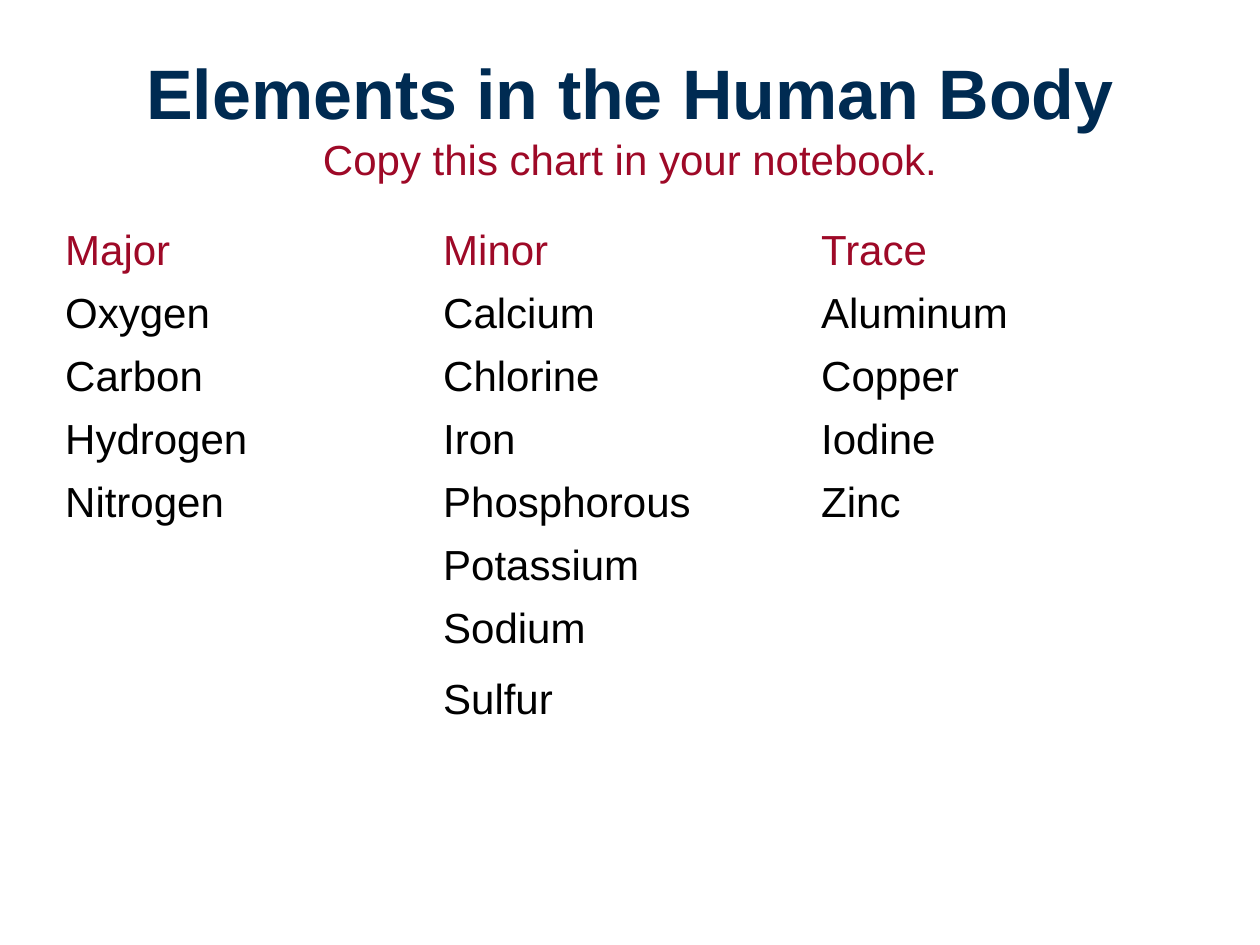
from dataclasses import dataclass
from itertools import zip_longest

from pptx import Presentation
from pptx.dml.color import RGBColor
from pptx.enum.text import MSO_ANCHOR, MSO_AUTO_SIZE, PP_ALIGN
from pptx.slide import Slide
from pptx.util import Cm, Pt

COLORS = {"navy": "002B52", "crimson": "9E0927", "black": "000000"}
FONT = "Arial"
COLUMN_WIDTH = Cm(7.62)
ROW_HEIGHTS = [Cm(1.27)] * 6 + [Cm(1.45)] * 3


@dataclass
class ElementGroup:
    heading: str
    elements: list[str]


GROUPS = [
    ElementGroup("Major", ["Oxygen", "Carbon", "Hydrogen", "Nitrogen"]),
    ElementGroup("Minor", ["Calcium", "Chlorine", "Iron", "Phosphorous",
                           "Potassium", "Sodium", "Sulfur"]),
    ElementGroup("Trace", ["Aluminum", "Copper", "Iodine", "Zinc"]),
]


def format_font(font, size: int, color: str, bold: bool = False) -> None:
    font.name = FONT
    font.size = Pt(size)
    font.bold = bold
    font.color.rgb = RGBColor.from_string(COLORS[color])


def draw_title(slide: Slide, heading: str, instruction: str) -> None:
    title = slide.shapes.title
    title.left, title.top = Cm(1.27), Cm(0.76)
    title.width, title.height = Cm(22.86), Cm(3.18)
    frame = title.text_frame
    frame.text = f"{heading}\v{instruction}"
    frame.auto_size = MSO_AUTO_SIZE.NONE
    frame.vertical_anchor = MSO_ANCHOR.MIDDLE
    line = frame.paragraphs[0]
    line.alignment = PP_ALIGN.CENTER
    heading_run, instruction_run = line.runs
    format_font(heading_run.font, 40, "navy", bold=True)
    format_font(instruction_run.font, 24, "crimson")


def draw_groups(slide: Slide, groups: list[ElementGroup]) -> None:
    chart = slide.shapes.add_table(
        len(ROW_HEIGHTS), len(groups), Cm(1.06), Cm(4.45),
        COLUMN_WIDTH * len(groups), sum(ROW_HEIGHTS)).table
    chart.first_row = chart.horz_banding = False
    for column in chart.columns:
        column.width = COLUMN_WIDTH
    for row, height in zip(chart.rows, ROW_HEIGHTS):
        row.height = height
    for cell in chart.iter_cells():
        cell.fill.background()

    entries = zip_longest(*([group.heading, *group.elements] for group in groups))
    for row_index, names in enumerate(entries):
        for column_index, name in enumerate(names):
            if name:
                entry = chart.cell(row_index, column_index).text_frame
                entry.text = name
                color = "black" if row_index else "crimson"
                format_font(entry.paragraphs[0].runs[0].font, 24, color)


def main() -> None:
    presentation = Presentation()
    presentation.slide_width, presentation.slide_height = Cm(25.4), Cm(19.05)
    slide = presentation.slides.add_slide(presentation.slide_layouts[5])
    draw_title(slide, "Elements in the Human Body",
               "Copy this chart in your notebook.")
    draw_groups(slide, GROUPS)
    presentation.save("out.pptx")


if __name__ == "__main__":
    main()
